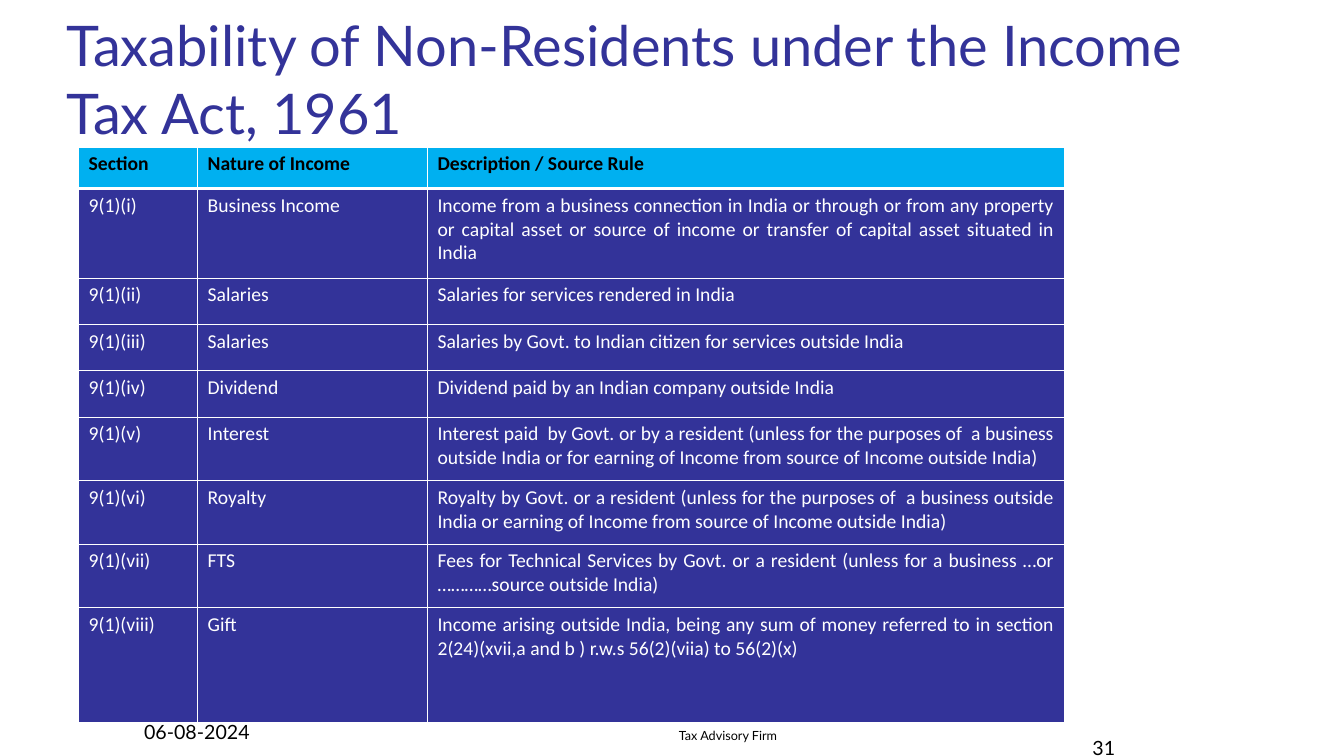
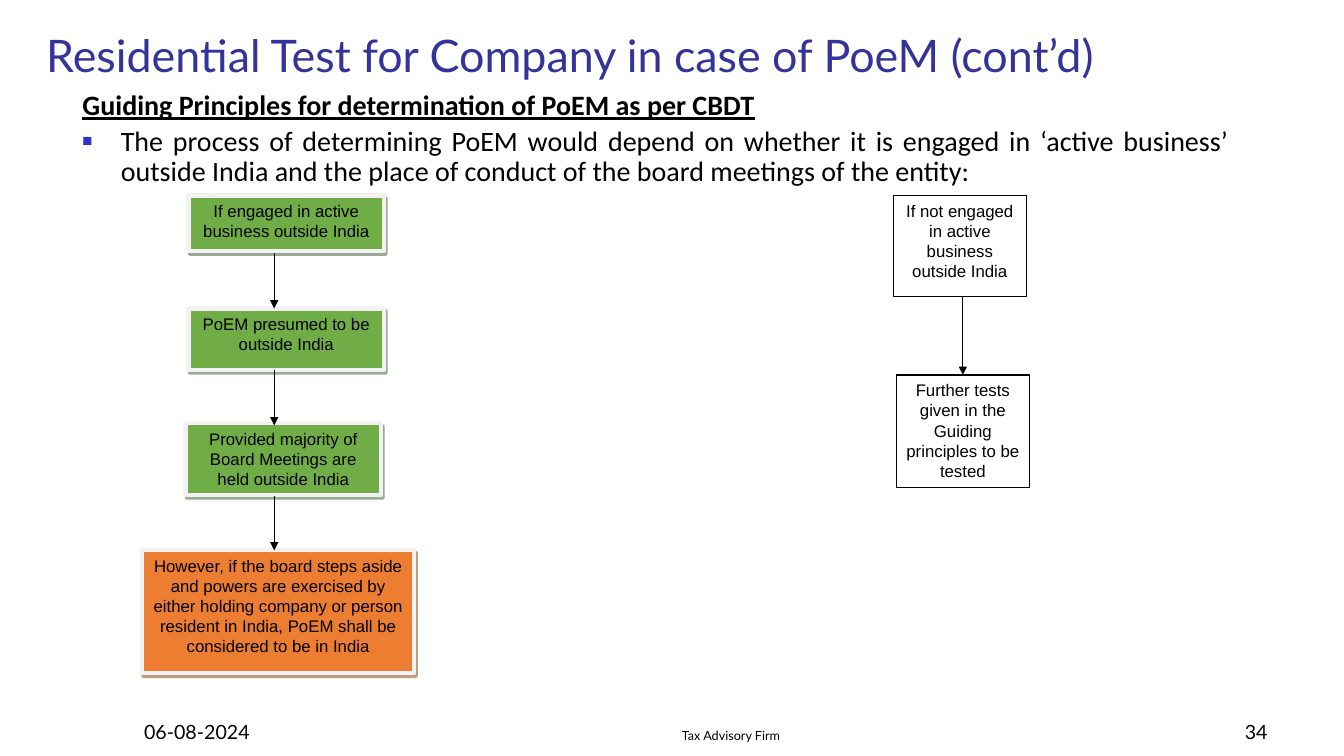
from lxml import etree
from pptx import Presentation
from pptx.dml.color import RGBColor
from pptx.enum.shapes import MSO_CONNECTOR, MSO_SHAPE
from pptx.enum.text import MSO_ANCHOR, PP_ALIGN
from pptx.oxml.ns import qn
from pptx.util import Pt

PX = 9144
RECT, STRAIGHT = MSO_SHAPE.RECTANGLE, MSO_CONNECTOR.STRAIGHT
TOP, BOTTOM = MSO_ANCHOR.TOP, MSO_ANCHOR.BOTTOM
LEFT, CENTER, RIGHT, JUSTIFY = (
    PP_ALIGN.LEFT, PP_ALIGN.CENTER, PP_ALIGN.RIGHT, PP_ALIGN.JUSTIFY)
TOP_SITE = 0

COLORS = {
    "indigo": "333399", "sky": "00B0F0", "white": "FFFFFF", "black": "000000",
    "bullet": "3333CC", "frame": "F2F2F2", "green": "70AD47",
    "green_shadow": "375623", "orange": "ED7D31", "orange_shadow": "823B0B",
}
FOOTER = {"name": "Lato", "size": Pt(14)}
FIRM = {"name": "Lato", "size": Pt(9)}
CELL = {"name": "Calibri", "size": Pt(14), "bold": False}
HEADER = {**CELL, "bold": True}
BODY = {"name": "Calibri", "size": Pt(20)}
HEADING = {**BODY, "bold": True, "underline": True}
BOX = {"name": "Arial", "size": Pt(12)}

DATE_TEXT, FIRM_TEXT = "06-08-2024", "Tax Advisory Firm"

TAX_SLIDE = {
    "title": "Taxability of Non-Residents under the Income Tax Act, 1961",
    "title_box": (56, 24, 1169, 125), "title_size": 40,
    "number": "31", "number_box": (908, 708, 208, 50), "firm_left": 444,
}
POEM_SLIDE = {
    "title": "Residential Test for Company in case of PoeM (cont’d)",
    "title_box": (36, 8, 1285, 78), "title_size": 32,
    "number": "34", "number_box": (989, 692, 278, 50), "firm_left": 447,
}

TABLE_AT = (78, 146)
COLUMN_WIDTHS = [118, 228, 632]
ROW_HEIGHTS = [41, 89, 46, 46, 46, 63, 63, 63, 114]
INCOME_ROWS = [
    ("Section", "Nature of Income", "Description / Source Rule"),
    ("9(1)(i)", "Business Income",
     "Income from a business connection in India or through or from any property "
     "or capital asset or source of income or transfer of capital asset situated in India"),
    ("9(1)(ii)", "Salaries", "Salaries for services rendered in India"),
    ("9(1)(iii)", "Salaries",
     "Salaries by Govt. to Indian citizen for services outside India"),
    ("9(1)(iv)", "Dividend", "Dividend paid by an Indian company outside India"),
    ("9(1)(v)", "Interest",
     "Interest paid  by Govt. or by a resident (unless for the purposes of  a business "
     "outside India or for earning of Income from source of Income outside India)"),
    ("9(1)(vi)", "Royalty",
     "Royalty by Govt. or a resident (unless for the purposes of  a business outside "
     "India or earning of Income from source of Income outside India)"),
    ("9(1)(vii)", "FTS",
     "Fees for Technical Services by Govt. or a resident (unless for a business …or "
     "…………source outside India)"),
    ("9(1)(viii)", "Gift",
     "Income arising outside India, being any sum of money referred to in section "
     "2(24)(xvii,a and b ) r.w.s 56(2)(viia) to 56(2)(x)"),
]

GUIDING_BOX = (72, 86, 1157, 630)
GUIDING_HEADING = "Guiding Principles for determination of PoEM as per CBDT"
GUIDING_POINT = (
    "The process of determining PoEM would depend on whether it is engaged in "
    "‘active business’ outside India and the place of conduct of the board "
    "meetings of the entity:")

ACTIVE_STEPS = [
    ("If engaged in active business outside India", (187, 194, 194, 55), "green"),
    ("PoEM presumed to be outside India", (187, 306, 194, 61), "green"),
    ("Provided majority of Board Meetings are held outside India",
     (184, 420, 194, 71), "green"),
    ("However, if the board steps aside and powers are exercised by either holding "
     "company or person resident in India, PoEM shall be considered to be in India",
     (141, 546, 270, 122), "orange"),
]
ACTIVE_ARROW_X = 272
ACTIVE_ARROWS = [(251, 306), (367, 422), (492, 546)]
PASSIVE_STEPS = [
    ("If not engaged in active business outside India", (886, 194, 132, 100)),
    ("Further tests given in the Guiding principles to be tested",
     (889, 372, 132, 112)),
]
PASSIVE_ARROW_X = 955
PASSIVE_ARROW = (294, 372)


def px(*lengths):
    return [length * PX for length in lengths]


def rgb(color):
    return RGBColor.from_string(COLORS[color])


def add_xml(parent, tag, **attributes):
    return etree.SubElement(parent, qn(tag), attributes)


def add_color(parent, color):
    return add_xml(parent, "a:srgbClr", val=COLORS[color])


def write(paragraph, text, font_values, color="black", align=LEFT):
    run = paragraph.add_run()
    run.text = text
    paragraph.alignment = align
    for key, value in font_values.items():
        setattr(run.font, key, value)
    run.font.color.rgb = rgb(color)


def add_text(slide, box, text, font_values, color="black", align=LEFT, anchor=BOTTOM):
    frame = slide.shapes.add_textbox(*px(*box)).text_frame
    frame.word_wrap = True
    frame.vertical_anchor = anchor
    write(frame.paragraphs[0], text, font_values, color, align)
    return frame


def start_slide(deck, content):
    slide = deck.slides.add_slide(deck.slide_layouts[6])
    title_font = {"name": "Lato", "size": Pt(content["title_size"])}
    add_text(slide, content["title_box"], content["title"], title_font, "indigo")
    add_text(slide, (133, 692, 278, 50), DATE_TEXT, FOOTER)
    add_text(slide, (content["firm_left"], 692, 556, 50), FIRM_TEXT, FIRM, align=CENTER)
    add_text(slide, content["number_box"], content["number"], FOOTER, align=RIGHT)
    return slide


def add_borders(cell, widths):
    properties = cell._tc.get_or_add_tcPr()
    for side, width in widths.items():
        border = add_xml(properties, f"a:ln{side}", w=str(Pt(width)))
        add_color(add_xml(border, "a:solidFill"), "white")


def add_income_table(slide):
    size = (sum(COLUMN_WIDTHS), sum(ROW_HEIGHTS))
    table = slide.shapes.add_table(
        len(ROW_HEIGHTS), len(COLUMN_WIDTHS), *px(*TABLE_AT, *size)).table
    table.horz_banding = False
    for column, width in zip(table.columns, px(*COLUMN_WIDTHS)):
        column.width = width
    for row, height in zip(table.rows, px(*ROW_HEIGHTS)):
        row.height = height
    for r, texts in enumerate(INCOME_ROWS):
        is_header = r == 0
        fill, color, font = (
            ("sky", "black", HEADER) if is_header else ("indigo", "white", CELL))
        for c, text in enumerate(texts):
            cell = table.cell(r, c)
            add_borders(cell, {"L": 1, "R": 1, "T": 3 if r == 1 else 1,
                               "B": 3 if is_header else 1})
            cell.fill.solid()
            cell.fill.fore_color.rgb = rgb(fill)
            align = JUSTIFY if c == 2 and not is_header else LEFT
            write(cell.text_frame.paragraphs[0], text, font, color, align)


def add_guiding_text(slide):
    frame = add_text(slide, GUIDING_BOX, GUIDING_HEADING, HEADING,
                     align=JUSTIFY, anchor=TOP)
    point = frame.add_paragraph()
    properties = point._p.get_or_add_pPr()
    properties.set("marL", str(38 * PX))
    properties.set("indent", str(-38 * PX))
    add_color(add_xml(properties, "a:buClr"), "bullet")
    add_xml(properties, "a:buSzPct", val="60000")
    add_xml(properties, "a:buFont", typeface="Arial")
    add_xml(properties, "a:buChar", char="■")
    write(point, GUIDING_POINT, BODY, align=JUSTIFY)
    point.space_before = Pt(4)
    for paragraph in frame.paragraphs:
        paragraph.line_spacing = 0.9


def add_step(slide, text, box, fill="white", line="black", line_width=0.75):
    step = slide.shapes.add_shape(RECT, *px(*box))
    step.shadow.inherit = False
    step.fill.solid()
    step.fill.fore_color.rgb = rgb(fill)
    step.line.color.rgb = rgb(line)
    step.line.width = Pt(line_width)
    step.text_frame.word_wrap = True
    step.text_frame.vertical_anchor = TOP
    paragraph = step.text_frame.paragraphs[0]
    write(paragraph, text, BOX, align=CENTER)
    paragraph.space_after = Pt(8)
    return step


def add_framed_step(slide, text, box, fill):
    step = add_step(slide, text, box, fill, "frame", 3)
    effects = step._element.spPr.find(qn("a:effectLst"))
    shadow = add_xml(effects, "a:outerShdw", dist=str(Pt(2.2)), dir=str(63 * 60000),
                     algn="ctr", rotWithShape="0")
    add_xml(add_color(shadow, f"{fill}_shadow"), "a:alpha", val="50000")


def add_arrow(slide, x, start, end):
    arrow = slide.shapes.add_connector(STRAIGHT, *px(x, start, x, end))
    arrow.line.color.rgb = rgb("black")
    arrow.line.width = Pt(0.75)
    add_xml(arrow.line._get_or_add_ln(), "a:tailEnd", type="triangle")
    add_xml(arrow._element.spPr, "a:effectLst")
    return arrow


def main():
    deck = Presentation()
    deck.slide_width, deck.slide_height = px(1333, 750)

    add_income_table(start_slide(deck, TAX_SLIDE))

    poem = start_slide(deck, POEM_SLIDE)
    add_guiding_text(poem)
    for text, box, fill in ACTIVE_STEPS:
        add_framed_step(poem, text, box, fill)
    for start, end in ACTIVE_ARROWS:
        add_arrow(poem, ACTIVE_ARROW_X, start, end)
    passive_boxes = [add_step(poem, text, box) for text, box in PASSIVE_STEPS]
    passive_arrow = add_arrow(poem, PASSIVE_ARROW_X, *PASSIVE_ARROW)
    passive_arrow.end_connect(passive_boxes[-1], TOP_SITE)

    deck.save("out.pptx")


if __name__ == "__main__":
    main()
